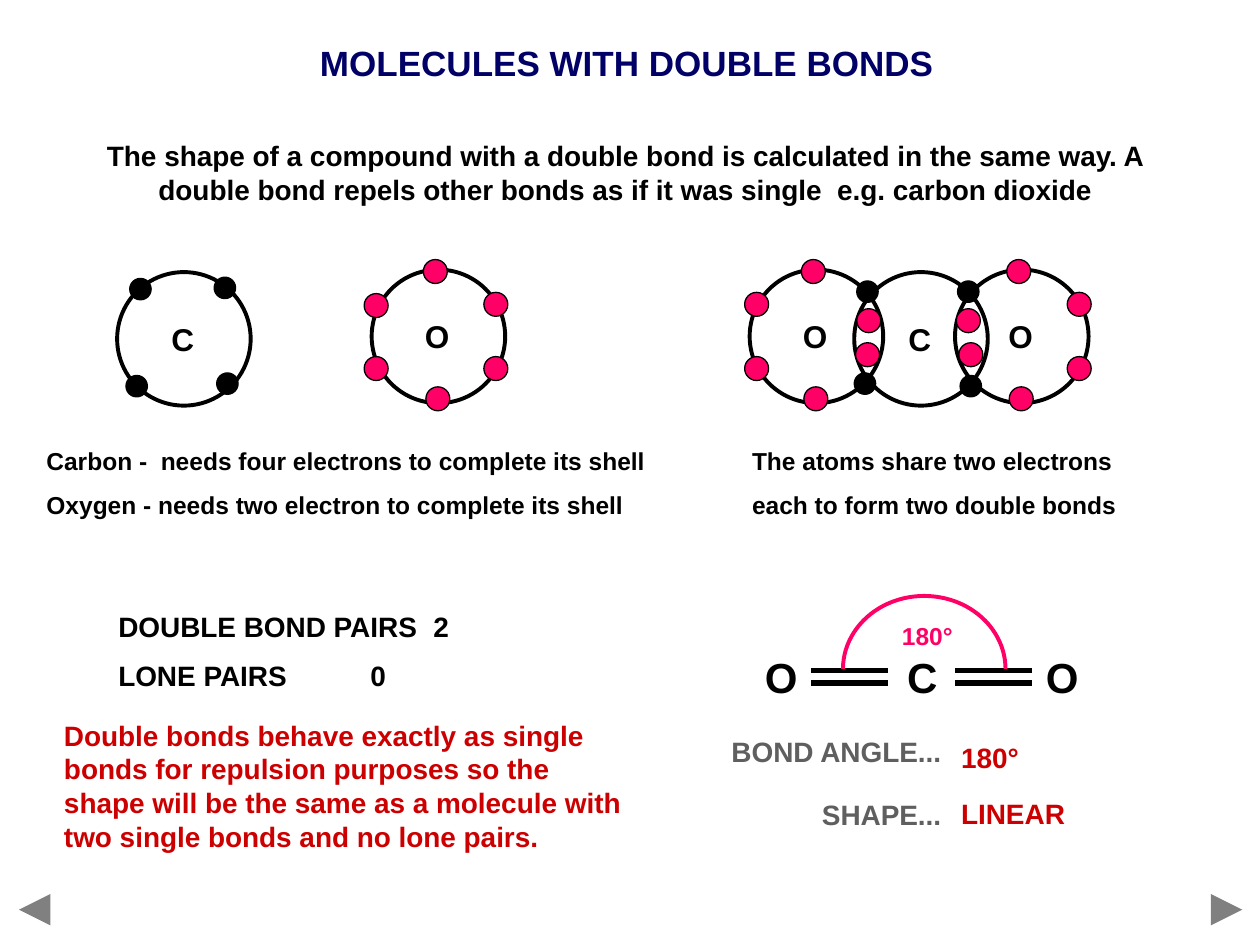
from lxml import etree
from pptx import Presentation
from pptx.dml.color import RGBColor
from pptx.enum.shapes import MSO_CONNECTOR, MSO_SHAPE
from pptx.enum.text import MSO_ANCHOR, PP_ALIGN
from pptx.oxml.ns import qn
from pptx.util import Inches, Pt

BLACK = RGBColor(0x00, 0x00, 0x00)
NAVY = RGBColor(0x00, 0x00, 0x66)
PINK = RGBColor(0xFF, 0x00, 0x66)
RED = RGBColor(0xCC, 0x00, 0x00)
DARK_GREY = RGBColor(0x5F, 0x5F, 0x5F)
GREY = RGBColor(0x80, 0x80, 0x80)

presentation = Presentation()
presentation.slide_width = Inches(10)
presentation.slide_height = Inches(7.5)
slide = presentation.slides.add_slide(presentation.slide_layouts[6])


def add_text(text, left, top, width, height, size, color=BLACK, align=PP_ALIGN.LEFT,
             wrap=False, gap=8, line_spacing=None, anchor=MSO_ANCHOR.MIDDLE):
    box = slide.shapes.add_textbox(Inches(left), Inches(top), Inches(width), Inches(height))
    text_frame = box.text_frame
    text_frame.word_wrap = wrap
    text_frame.vertical_anchor = anchor
    text_frame.text = text
    for index, paragraph in enumerate(text_frame.paragraphs):
        paragraph.alignment = align
        if index:
            paragraph.space_before = Pt(gap)
        if line_spacing:
            paragraph.line_spacing = Pt(line_spacing)
        for run in paragraph.runs:
            run.font.name = "Arial"
            run.font.size = Pt(size)
            run.font.bold = True
            run.font.color.rgb = color


def add_line(x1, y1, x2, y2, color, width):
    line = slide.shapes.add_connector(
        MSO_CONNECTOR.STRAIGHT, Inches(x1), Inches(y1), Inches(x2), Inches(y2))
    line.line.color.rgb = color
    line.line.width = Pt(width)
    etree.SubElement(line._element.spPr, qn("a:effectLst"))
    return line


# Navigation arrows
for start, end in ((9.65, 9.86), (0.36, 0.15)):
    arrow = add_line(start, 7.22, end, 7.22, GREY, 6)
    etree.SubElement(arrow.line._get_or_add_ln(), qn("a:tailEnd"), type="triangle")

# Title and introduction
add_text("MOLECULES WITH DOUBLE BONDS", 2.44, 0.28, 5.07, 0.43, 20, NAVY, PP_ALIGN.CENTER)
add_text("The shape of a compound with a double bond is calculated in the same way. "
         "A double bond repels other bonds as if it was single  e.g. carbon dioxide",
         0.75, 1.05, 8.43, 0.64, 16, align=PP_ALIGN.CENTER, wrap=True, anchor=MSO_ANCHOR.TOP)

# Atoms: symbol, shell corner, electron offsets from that corner
SHELL = 1.06
ELECTRONS = {"C": (0.17, BLACK), "O": (0.19, PINK)}
top_and_bottom = [(0.41, -0.08), (0.43, 0.93)]
right_side = [(0.89, 0.18), (0.89, 0.69)]
atoms = [
    ("C", 0.93, 2.16, [(0.1, 0.05), (0.07, 0.82), (0.79, 0.8), (0.77, 0.04)]),
    ("O", 2.95, 2.14, top_and_bottom + right_side + [(-0.06, 0.19), (-0.06, 0.69)]),
    ("C", 6.78, 2.16, [(0.02, 0.07), (0, 0.8), (0.84, 0.82), (0.82, 0.07)]),
    ("O", 7.58, 2.14, top_and_bottom + right_side + [(0.01, 0.31), (0.03, 0.58)]),
    ("O", 5.95, 2.14, top_and_bottom + [(-0.04, 0.18), (-0.04, 0.69), (0.85, 0.31), (0.84, 0.58)]),
]
for symbol, left, top, offsets in atoms:
    add_text(symbol, left + 0.32, top + 0.33, 0.4, 0.4, 18, align=PP_ALIGN.CENTER)
    diameter, color = ELECTRONS[symbol]
    circles = [(0, 0, SHELL, None, 2.25)]
    circles += [(x, y, diameter, color, 0.75) for x, y in offsets]
    for x, y, size, fill, line_width in circles:
        circle = slide.shapes.add_shape(
            MSO_SHAPE.OVAL, Inches(left + x), Inches(top + y), Inches(size), Inches(size))
        circle.shadow.inherit = False
        circle.line.color.rgb = BLACK
        circle.line.width = Pt(line_width)
        if fill is None:
            circle.fill.background()
        else:
            circle.fill.solid()
            circle.fill.fore_color.rgb = fill

# Captions under the atoms
add_text("Carbon -  needs four electrons to complete its shell\n"
         "Oxygen - needs two electron to complete its shell",
         0.27, 3.49, 4.96, 0.68, 14, wrap=True)
add_text("The atoms share two electrons\neach to form two double bonds",
         5.87, 3.49, 3.09, 0.68, 14, wrap=True)

# Pair counts and explanation
add_text("DOUBLE BOND PAIRS\t2\nLONE PAIRS\t\t0", 0.84, 4.78, 3.32, 0.77, 16, gap=9)
add_text("Double bonds behave exactly as single bonds for repulsion purposes so the shape "
         "will be the same as a molecule with two single bonds and no lone pairs.",
         0.41, 5.65, 4.67, 1.17, 16, RED, wrap=True)

# Bond angle and shape
add_text("BOND ANGLE...\nSHAPE...", 5.69, 5.65, 1.88, 1.01, 16, DARK_GREY,
         PP_ALIGN.RIGHT, line_spacing=28)
add_text("180°\nLINEAR", 7.53, 5.75, 1.03, 0.9, 16, RED, line_spacing=24)

# Structural formula with double bonds
for symbol, left in (("O", 5.97), ("C", 7.09), ("O", 8.2)):
    add_text(symbol, left, 5.12, 0.46, 0.5, 24, align=PP_ALIGN.CENTER)
for left in (6.44, 7.58):
    for y in (5.32, 5.42):
        add_line(left, y, left + 0.61, y, BLACK, 3)

# Angle arc: upper half of an ellipse
arc = slide.shapes.add_shape(
    MSO_SHAPE.ARC, Inches(6.69), Inches(4.73), Inches(1.29), Inches(1.16))
arc.adjustments[0] = 108  # 180 degrees in units of 100000/60000
arc.adjustments[1] = 0
arc.shadow.inherit = False
arc.fill.background()
arc.line.color.rgb = PINK
arc.line.width = Pt(2.25)
add_text("180°", 7.06, 4.88, 0.6, 0.33, 14, PINK, PP_ALIGN.CENTER)

presentation.save("out.pptx")
